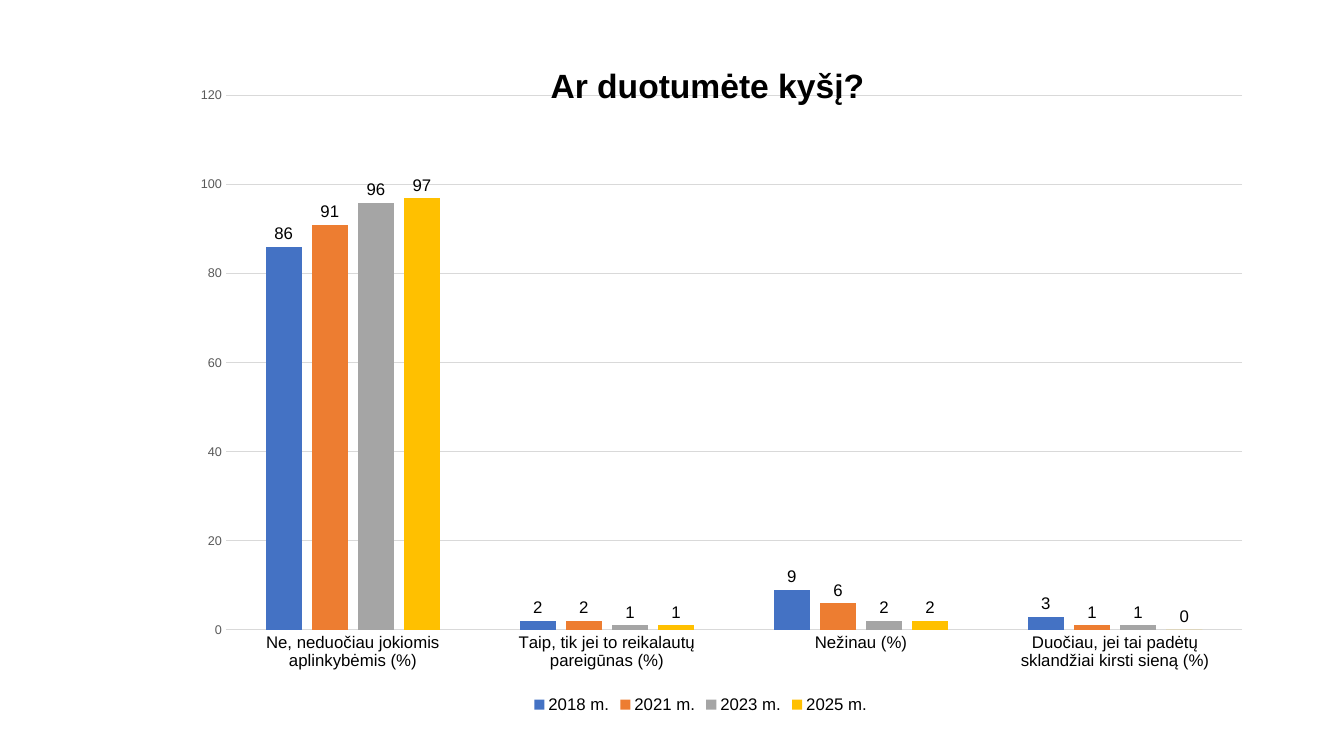
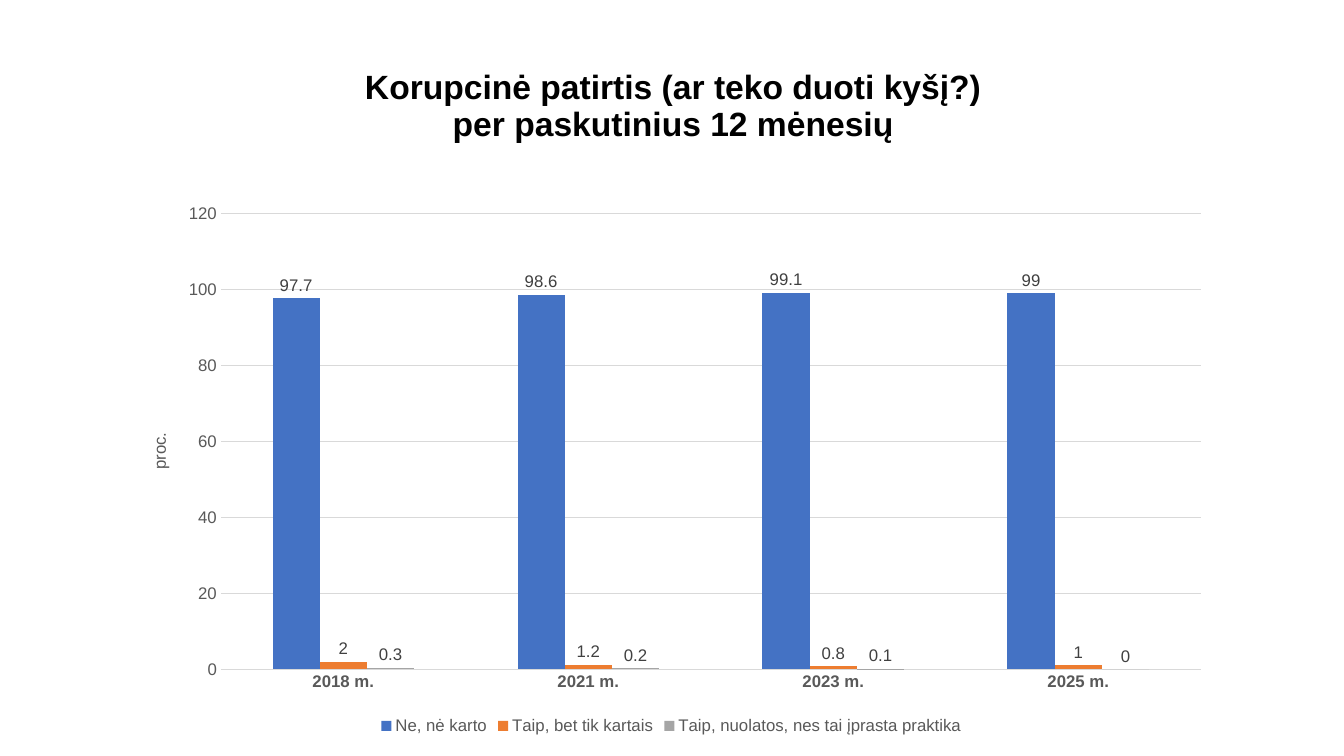
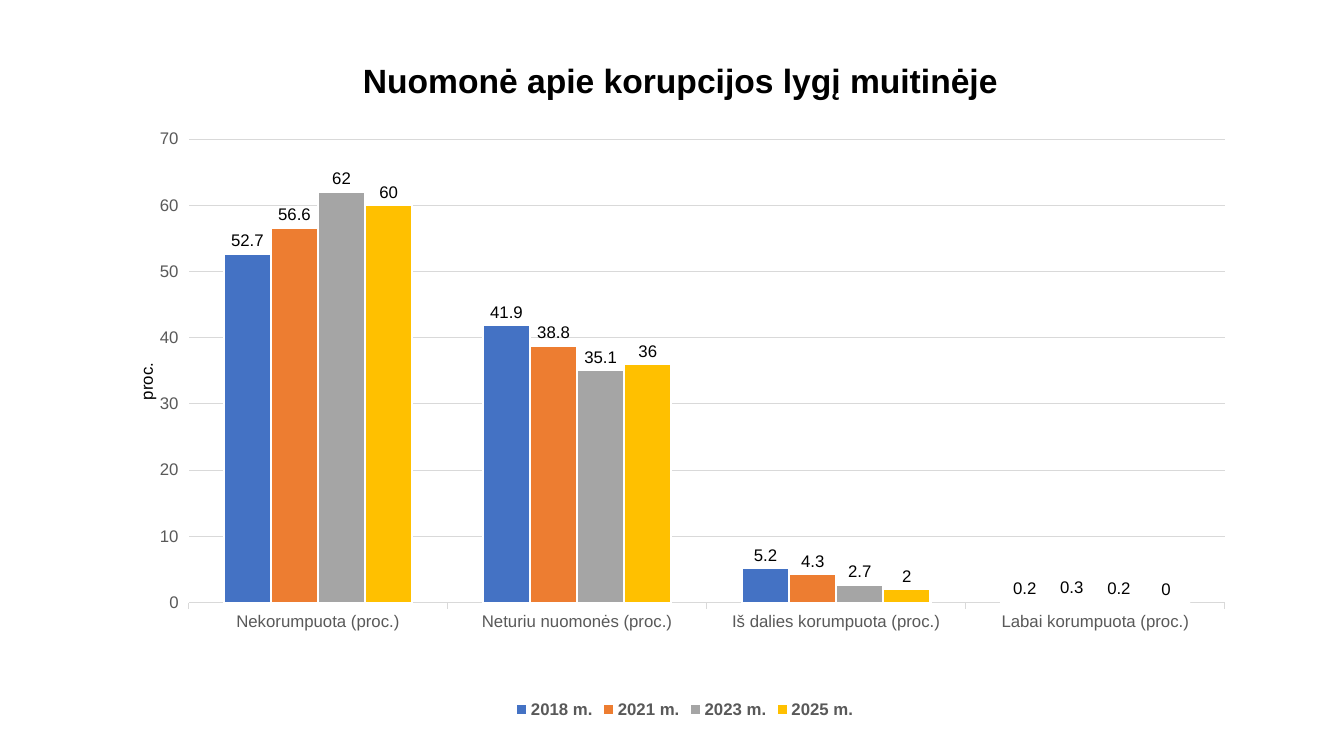
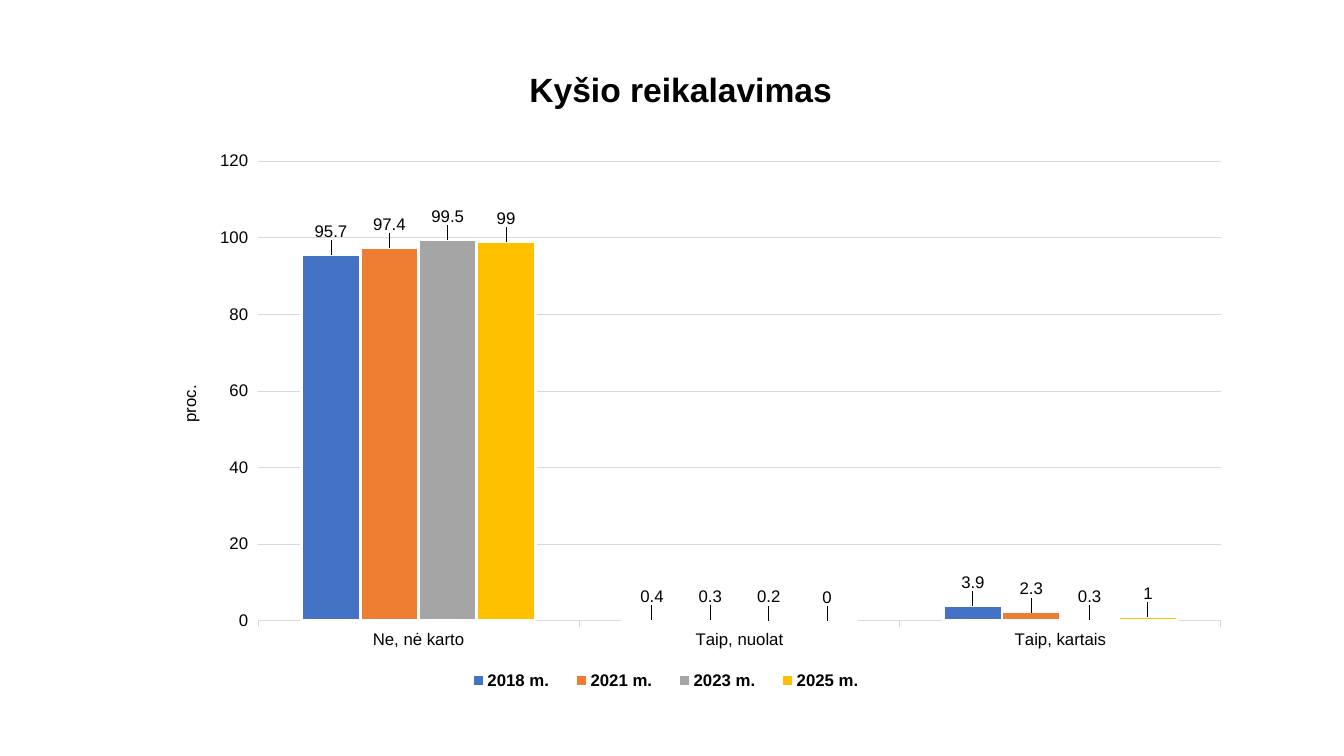
from dataclasses import dataclass
from typing import Optional

from pptx import Presentation
from pptx.chart.data import CategoryChartData
from pptx.dml.color import RGBColor
from pptx.enum import chart as ce
from pptx.oxml import ns, xmlchemy
from pptx.util import Inches, Pt

FONT = "Arial"
BLACK = RGBColor(0x00, 0x00, 0x00)
WHITE = RGBColor(0xFF, 0xFF, 0xFF)
DARK = RGBColor(0x40, 0x40, 0x40)
GRAY = RGBColor(0x59, 0x59, 0x59)
GRID = RGBColor(0xD9, 0xD9, 0xD9)
SERIES_COLORS = (
    RGBColor(0x44, 0x72, 0xC4),
    RGBColor(0xED, 0x7D, 0x31),
    RGBColor(0xA5, 0xA5, 0xA5),
    RGBColor(0xFF, 0xC0, 0x00),
)
YEARS = ("2018 m.", "2021 m.", "2023 m.", "2025 m.")


@dataclass(frozen=True)
class Box:
    """Place on the slide in inches; no width means position only."""
    x: float
    y: float
    w: float = 0
    h: float = 0


@dataclass(frozen=True)
class Survey:
    title: str
    title_at: Box
    frame: Box
    plot: Box
    categories: tuple[str, ...]
    names: tuple[str, ...]
    values: tuple[tuple[float, ...], ...]
    axis_max: int = 120
    axis_step: int = 20
    gap: int = 150
    overlap: int = 0
    outline: float = 0
    ticks: bool = False
    cat_color: RGBColor = GRAY
    cat_bold: bool = False
    val_color: RGBColor = GRAY
    val_size: int = 12
    label_color: RGBColor = BLACK
    label_lift: float = 0
    legend_color: RGBColor = GRAY
    legend_bold: bool = False
    legend_at: Optional[Box] = None
    unit_at: Optional[Box] = None
    unit_color: RGBColor = BLACK


SURVEYS = (
    Survey(
        title="Ar duotumėte kyšį?", title_at=Box(5.4, 0.57),
        frame=Box(1.49, 0.29, 10.92, 6.83), plot=Box(2.24, 0.95, 10.08, 5.3),
        categories=("Ne, neduočiau jokiomis aplinkybėmis (%)",
                    "Taip, tik jei to reikalautų pareigūnas (%)",
                    "Nežinau (%)",
                    "Duočiau, jei tai padėtų sklandžiai kirsti sieną (%)"),
        names=YEARS,
        values=((86, 2, 9, 3), (91, 2, 6, 1), (96, 1, 2, 1), (97, 1, 2, 0)),
        gap=219, overlap=-27, cat_color=BLACK, val_size=9, legend_color=BLACK,
    ),
    Survey(
        title="Korupcinė patirtis (ar teko duoti kyšį?)\nper paskutinius 12 mėnesių",
        title_at=Box(3.59, 0.63),
        frame=Box(1.2, 0.49, 10.92, 6.84), plot=Box(2.19, 2.12, 9.72, 4.52),
        categories=YEARS,
        names=("Ne, nė karto", "Taip, bet tik kartais",
               "Taip, nuolatos, nes tai įprasta praktika"),
        values=((97.7, 98.6, 99.1, 99), (2, 1.2, 0.8, 1), (0.3, 0.2, 0.1, 0)),
        gap=219, cat_bold=True, label_color=DARK,
        unit_at=Box(1.45, 4.26), unit_color=GRAY,
    ),
    Survey(
        title="Nuomonė apie korupcijos lygį muitinėje", title_at=Box(3.54, 0.53),
        frame=Box(1.26, 0, 11.07, 7.17), plot=Box(1.87, 1.38, 10.28, 4.6),
        categories=("Nekorumpuota (proc.)", "Neturiu nuomonės (proc.)",
                    "Iš dalies korumpuota (proc.)", "Labai korumpuota (proc.)"),
        names=YEARS,
        values=((52.7, 41.9, 5.2, 0.2), (56.6, 38.8, 4.3, 0.3),
                (62, 35.1, 2.7, 0.2), (60, 36, 2, 0)),
        axis_max=70, axis_step=10, outline=1.5, ticks=True,
        legend_bold=True, unit_at=Box(1.32, 3.57),
    ),
    Survey(
        title="Kyšio reikalavimas", title_at=Box(5.19, 0.61),
        frame=Box(1.51, 0.4, 10.84, 6.54), plot=Box(2.56, 1.6, 9.55, 4.56),
        categories=("Ne, nė karto", "Taip, nuolat", "Taip, kartais"),
        names=YEARS,
        values=((95.7, 0.4, 3.9), (97.4, 0.3, 2.3), (99.5, 0.2, 0.3), (99, 0, 1)),
        outline=2, ticks=True, cat_color=BLACK, val_color=BLACK, label_lift=0.1,
        legend_color=BLACK, legend_bold=True, legend_at=Box(4.48, 6.6, 4.25, 0.3),
        unit_at=Box(1.75, 3.79),
    ),
)


def style_font(font, size: float = 12, color: RGBColor = BLACK, bold: bool = False) -> None:
    font.name, font.size, font.bold = FONT, Pt(size), bold
    font.color.rgb = color


def write_text(tf, content: str, **style) -> None:
    """Write one paragraph per line, all in the same format."""
    for i, line in enumerate(content.split("\n")):
        p = tf.paragraphs[0] if i == 0 else tf.add_paragraph()
        r = p.add_run()
        r.text = line
        style_font(r.font, **style)


def set_layout(el, index: int, **values: object) -> None:
    """Give a chart part a manual layout; index is its place among the children."""
    layout = el.find(ns.qn("c:layout"))
    if layout is None:
        layout = xmlchemy.OxmlElement("c:layout")
        el.insert(index, layout)
    for child in list(layout):
        layout.remove(child)
    manual = xmlchemy.OxmlElement("c:manualLayout")
    layout.append(manual)
    for tag, value in values.items():
        item = xmlchemy.OxmlElement(f"c:{tag}")
        item.set("val", str(value))
        manual.append(item)


def place(el, frame: Box, box: Box, index: int = 1, **target: str) -> None:
    """Put a chart part at a box given in slide inches."""
    values = dict(target, xMode="edge", yMode="edge",
                  x=(box.x - frame.x) / frame.w, y=(box.y - frame.y) / frame.h)
    if box.w:
        values.update(w=box.w / frame.w, h=box.h / frame.h)
    set_layout(el, index, **values)


def style_axes(chart, s: Survey) -> None:
    cat, val = chart.category_axis, chart.value_axis
    style_font(cat.tick_labels.font, color=s.cat_color, bold=s.cat_bold)
    style_font(val.tick_labels.font, size=s.val_size, color=s.val_color)
    mark = ce.XL_TICK_MARK.OUTSIDE if s.ticks else ce.XL_TICK_MARK.NONE
    for axis in (cat, val):
        axis.major_tick_mark = mark
        axis.minor_tick_mark = ce.XL_TICK_MARK.NONE
    val.minimum_scale, val.maximum_scale, val.major_unit = 0, s.axis_max, s.axis_step
    val.has_major_gridlines = True
    for line in (cat.format.line, val.major_gridlines.format.line):
        line.color.rgb, line.width = GRID, Pt(0.75)
    val.format.line.fill.background()
    if s.unit_at:
        write_text(val.axis_title.text_frame, "proc.", color=s.unit_color)
        title = chart.element.xpath(".//c:valAx/c:title")[0]
        body = title.xpath(".//a:bodyPr")[0]
        body.set("rot", "-5400000")
        body.set("vert", "horz")
        place(title, s.frame, s.unit_at)


def style_series(chart, s: Survey) -> None:
    plot = chart.plots[0]
    plot.gap_width, plot.overlap, plot.vary_by_categories = s.gap, s.overlap, False
    for series, color in zip(plot.series, SERIES_COLORS):
        series.format.fill.solid()
        series.format.fill.fore_color.rgb = color
        if s.outline:
            series.format.line.color.rgb = WHITE
            series.format.line.width = Pt(s.outline)
        labels = series.data_labels
        labels.show_value = True
        labels.position = ce.XL_LABEL_POSITION.OUTSIDE_END
        style_font(labels.font, color=s.label_color)
        if s.label_lift:
            for i in range(len(s.categories)):
                label = series.points[i].data_label
                style_font(label.font, color=s.label_color)
                label.position = ce.XL_LABEL_POSITION.OUTSIDE_END
    # Lifted value labels
    if s.label_lift:
        for el in chart.element.xpath(".//c:dLbl"):
            set_layout(el, 1, x=0, y=-s.label_lift / s.frame.h)


def add_survey(prs, s: Survey) -> None:
    slide = prs.slides.add_slide(prs.slide_layouts[6])
    data = CategoryChartData()
    data.categories = s.categories
    for name, values in zip(s.names, s.values):
        data.add_series(name, values)
    f = s.frame
    chart = slide.shapes.add_chart(
        ce.XL_CHART_TYPE.COLUMN_CLUSTERED,
        Inches(f.x), Inches(f.y), Inches(f.w), Inches(f.h), data).chart
    style_font(chart.font, size=10)

    # Title
    write_text(chart.chart_title.text_frame, s.title, size=24, bold=True)
    place(chart.element.xpath("./c:chart/c:title")[0], f, s.title_at)

    # Plot
    style_axes(chart, s)
    style_series(chart, s)
    place(chart.element.xpath(".//c:plotArea")[0], f, s.plot, 0, layoutTarget="inner")

    # Legend
    chart.has_legend = True
    chart.legend.position = ce.XL_LEGEND_POSITION.BOTTOM
    chart.legend.include_in_layout = False
    style_font(chart.legend.font, color=s.legend_color, bold=s.legend_bold)
    if s.legend_at:
        place(chart.element.xpath(".//c:legend")[0], f, s.legend_at)


def main() -> None:
    prs = Presentation()
    prs.slide_width, prs.slide_height = Inches(13.33), Inches(7.5)
    for survey in SURVEYS:
        add_survey(prs, survey)
    prs.save("out.pptx")


if __name__ == "__main__":
    main()
